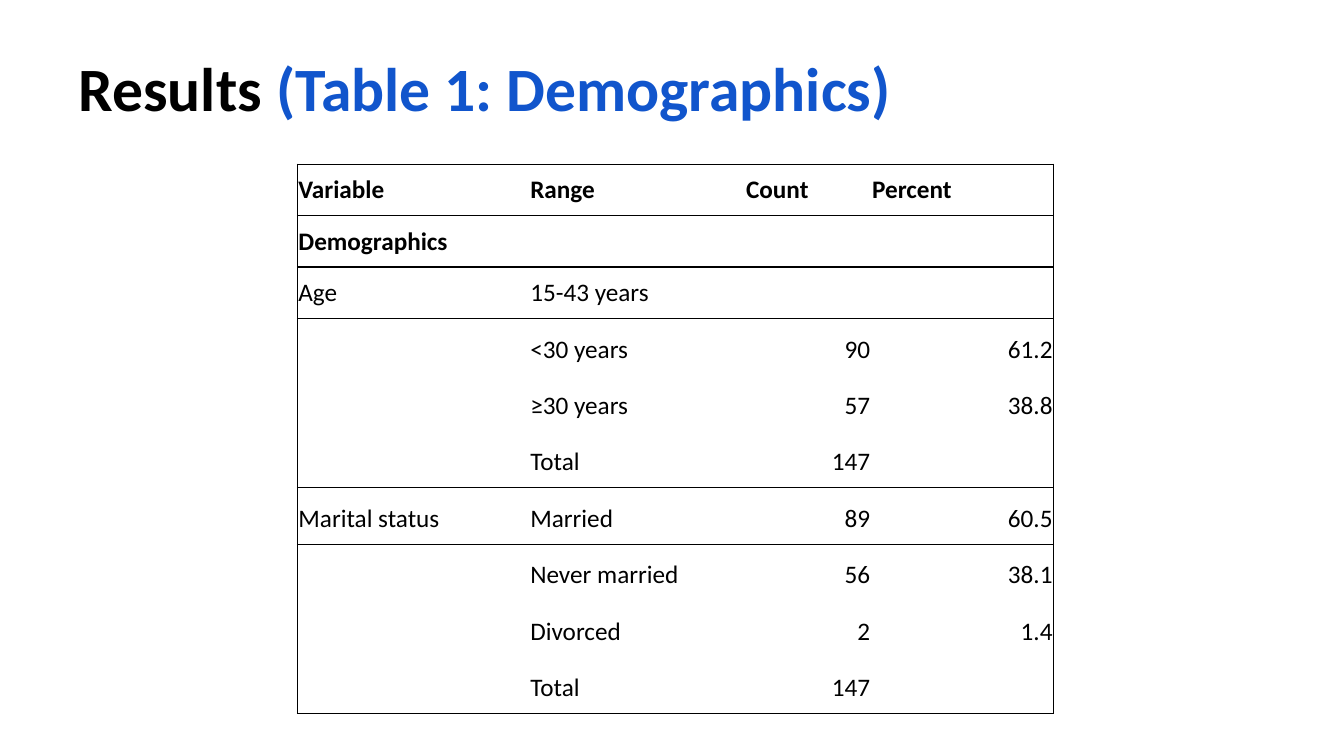
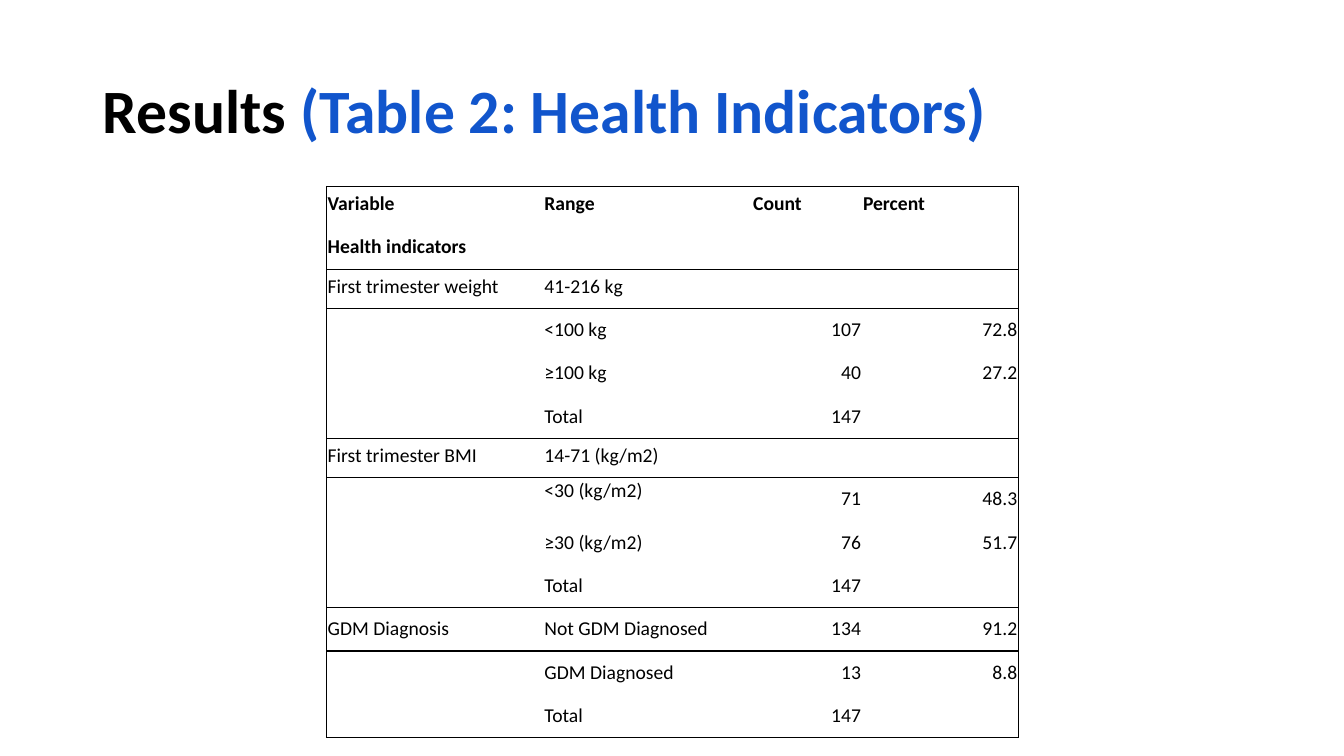
from dataclasses import dataclass

from lxml import etree
from pptx import Presentation
from pptx.dml.color import RGBColor
from pptx.enum.text import MSO_ANCHOR, PP_ALIGN
from pptx.oxml.ns import qn
from pptx.util import Pt

TOP, MIDDLE, BOTTOM = MSO_ANCHOR.TOP, MSO_ANCHOR.MIDDLE, MSO_ANCHOR.BOTTOM
LEFT, RIGHT = PP_ALIGN.LEFT, PP_ALIGN.RIGHT
TITLE_ONLY = 5
EMU_PER_PX = 9144
SLIDE_WIDTH, SLIDE_HEIGHT = 1333, 750
TITLE_WIDTH, TITLE_HEIGHT = 1150, 145
CELL_INSET, CELL_INSET_BOTTOM = 1, 10
RANGE_COLUMN, FIRST_NUMBER_COLUMN = 1, 2


@dataclass(frozen=True)
class Theme:
    font: str = "Calibri"
    text: str = "000000"
    accent: str = "1155CC"
    border: str = "000000"
    border_width: int = 1
    title_size: int = 44
    title_spacing: float = 0.9
    number_spacing: float = 1.15


@dataclass(frozen=True)
class Row:
    cells: tuple[str, str, str, str]
    height: int
    ruled: bool = False
    bold: bool = False
    range_anchor: MSO_ANCHOR = BOTTOM


@dataclass(frozen=True)
class ResultSlide:
    subtitle: str
    title_position: tuple[int, int]
    table_position: tuple[int, int]
    column_widths: tuple[int, ...]
    text_size: int
    rows: tuple[Row, ...]


THEME = Theme()
HEADINGS = ("Variable", "Range", "Count", "Percent")

RESULT_SLIDES = (
    ResultSlide(
        subtitle="(Table 1: Demographics)",
        title_position=(68, 18),
        table_position=(295, 163),
        column_widths=(230, 214, 125, 181),
        text_size=18,
        rows=(
            Row(HEADINGS, 51, ruled=True, bold=True),
            Row(("Demographics", "", "", ""), 51, ruled=True, bold=True),
            Row(("Age", "15-43 years", "", ""), 51, ruled=True),
            Row(("", "<30 years", "90", "61.2"), 56),
            Row(("", "≥30 years", "57", "38.8"), 56),
            Row(("", "Total", "147", ""), 56, ruled=True),
            Row(("Marital status", "Married", "89", "60.5"), 56, ruled=True),
            Row(("", "Never married", "56", "38.1"), 56),
            Row(("", "Divorced", "2", "1.4"), 56),
            Row(("", "Total", "147", ""), 56, ruled=True),
        ),
    ),
    ResultSlide(
        subtitle="(Table 2: Health Indicators)",
        title_position=(92, 40),
        table_position=(324, 185),
        column_widths=(215, 207, 109, 155),
        text_size=14,
        rows=(
            Row(HEADINGS, 39, bold=True),
            Row(("Health indicators", "", "", ""), 43, ruled=True, bold=True),
            Row(("First trimester weight", "41-216 kg", "", ""), 39, ruled=True),
            Row(("", "<100 kg", "107", "72.8"), 43),
            Row(("", "≥100 kg", "40", "27.2"), 43),
            Row(("", "Total", "147", ""), 43, ruled=True),
            Row(("First trimester BMI", "14-71 (kg/m2)", "", ""), 39, ruled=True),
            Row(("", "<30 (kg/m2)", "71", "48.3"), 43, range_anchor=TOP),
            Row(("", "≥30 (kg/m2)", "76", "51.7"), 43),
            Row(("", "Total", "147", ""), 43, ruled=True),
            Row(("GDM Diagnosis", "Not GDM Diagnosed", "134", "91.2"), 43, ruled=True),
            Row(("", "GDM Diagnosed", "13", "8.8"), 43),
            Row(("", "Total", "147", ""), 43, ruled=True),
        ),
    ),
)


def px(length: int) -> int:
    return length * EMU_PER_PX


def add_run(paragraph, text: str, size: int, color: str, bold: bool) -> None:
    run = paragraph.add_run()
    run.text = text
    run.font.name = THEME.font
    run.font.size = Pt(size)
    run.font.bold = bold
    run.font.color.rgb = RGBColor.from_string(color)


def format_title(slide, result: ResultSlide) -> None:
    title = slide.shapes.title
    title.left, title.top = map(px, result.title_position)
    title.width, title.height = px(TITLE_WIDTH), px(TITLE_HEIGHT)
    frame = title.text_frame
    frame.word_wrap = True
    frame.vertical_anchor = MIDDLE
    frame.margin_left = frame.margin_right = px(10)
    frame.margin_top = frame.margin_bottom = px(5)
    paragraph = frame.paragraphs[0]
    paragraph.alignment = LEFT
    paragraph.line_spacing = THEME.title_spacing
    add_run(paragraph, "Results ", THEME.title_size, THEME.text, True)
    add_run(paragraph, result.subtitle, THEME.title_size, THEME.accent, True)


def set_borders(cell, left: bool, right: bool, top: bool, bottom: bool) -> None:
    properties = cell._tc.get_or_add_tcPr()
    sides = (("a:lnL", left), ("a:lnR", right), ("a:lnT", top), ("a:lnB", bottom))
    for index, (tag, visible) in enumerate(sides):
        line = etree.Element(qn(tag), w=str(Pt(THEME.border_width)))
        if visible:
            fill = etree.SubElement(line, qn("a:solidFill"))
            etree.SubElement(fill, qn("a:srgbClr"), val=THEME.border)
        else:
            etree.SubElement(line, qn("a:noFill"))
        properties.insert(index, line)


def fill_cell(cell, text: str, column: int, row: Row, size: int) -> None:
    cell.fill.background()
    cell.margin_left = cell.margin_right = cell.margin_top = px(CELL_INSET)
    cell.margin_bottom = px(CELL_INSET_BOTTOM if text else CELL_INSET)
    cell.vertical_anchor = row.range_anchor if column == RANGE_COLUMN else BOTTOM
    if not text:
        return
    paragraph = cell.text_frame.paragraphs[0]
    if column >= FIRST_NUMBER_COLUMN and not row.bold:
        paragraph.alignment = RIGHT
        paragraph.line_spacing = THEME.number_spacing
    add_run(paragraph, text, size, THEME.text, row.bold)


def add_result_table(slide, result: ResultSlide) -> None:
    left, top = result.table_position
    width = sum(result.column_widths)
    height = sum(row.height for row in result.rows)
    table = slide.shapes.add_table(
        len(result.rows), len(result.column_widths),
        px(left), px(top), px(width), px(height),
    ).table
    table.first_row = False
    table.horz_banding = False
    for column, column_width in zip(table.columns, result.column_widths):
        column.width = px(column_width)
    last_column = len(result.column_widths) - 1
    ruled_above = True
    for row_index, row in enumerate(result.rows):
        table.rows[row_index].height = px(row.height)
        for column_index, text in enumerate(row.cells):
            cell = table.cell(row_index, column_index)
            fill_cell(cell, text, column_index, row, result.text_size)
            set_borders(
                cell,
                left=column_index == 0,
                right=column_index == last_column,
                top=ruled_above,
                bottom=row.ruled,
            )
        ruled_above = row.ruled


def main() -> None:
    presentation = Presentation()
    presentation.slide_width = px(SLIDE_WIDTH)
    presentation.slide_height = px(SLIDE_HEIGHT)
    for result in RESULT_SLIDES:
        slide = presentation.slides.add_slide(presentation.slide_layouts[TITLE_ONLY])
        format_title(slide, result)
        add_result_table(slide, result)
    presentation.save("out.pptx")


if __name__ == "__main__":
    main()
